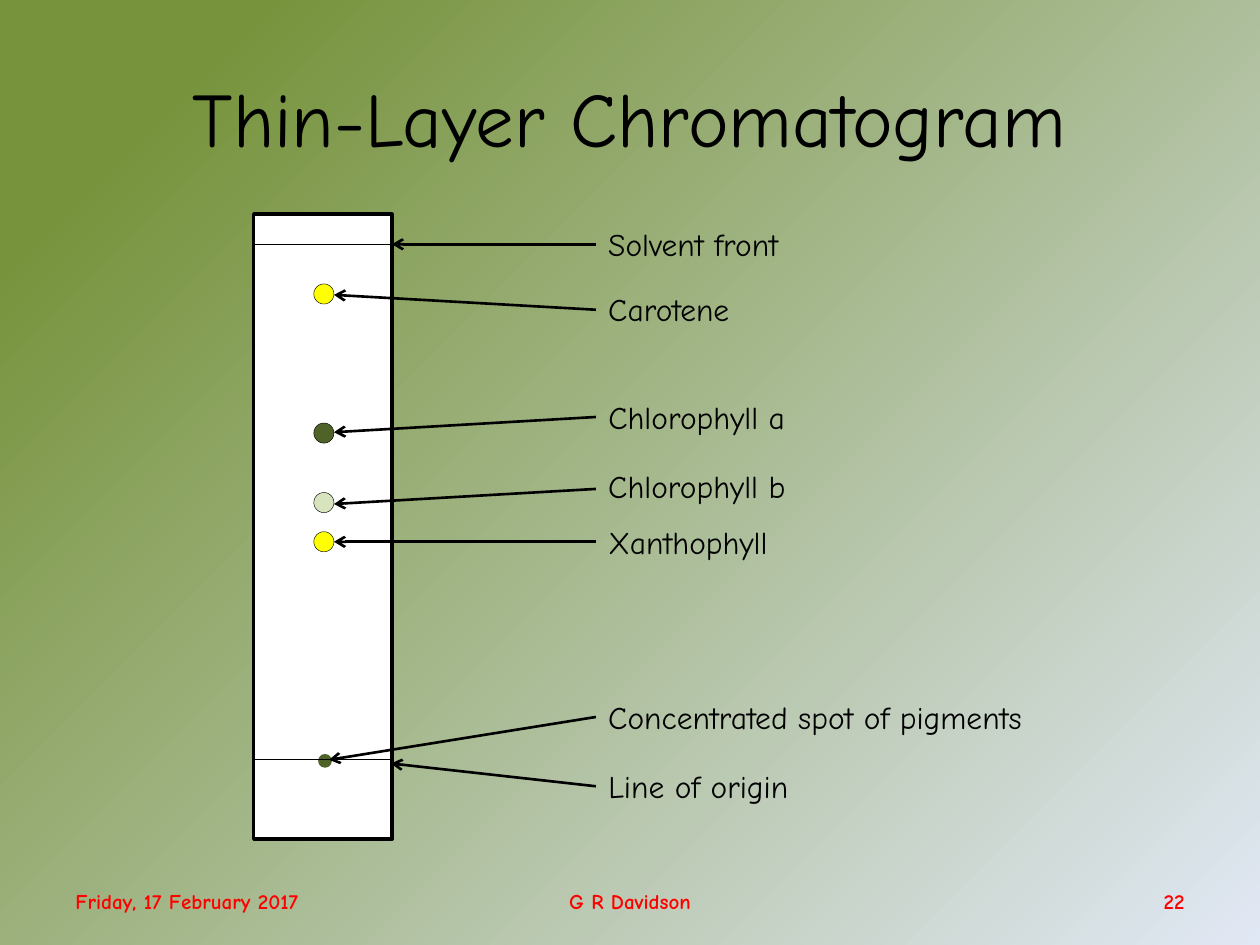
from dataclasses import dataclass

import pptx
import pptx.dml.color
import pptx.enum.dml
import pptx.enum.shapes
import pptx.enum.text
import pptx.oxml
import pptx.oxml.ns
import pptx.util

Pt = pptx.util.Pt
Align = pptx.enum.text.PP_ALIGN
Shape = pptx.enum.shapes.MSO_SHAPE


@dataclass(frozen=True)
class Theme:
    font: str = "Comic Neue"
    ink: str = "000000"
    footer: str = "FF0000"
    paper: str = "FFFFFF"
    yellow: str = "FFFF00"
    dark_green: str = "4F6228"
    pale_green: str = "D7E4BD"
    backdrop: tuple = ((0.12, "77933C"), (1, "E1E8F5"))
    title_size: float = 44
    label_size: float = 18
    footer_size: float = 12


THEME = Theme()

STRIP_LEFT, STRIP_TOP, STRIP_WIDTH, STRIP_HEIGHT = 145, 122.4, 79, 357.2
STRIP_RIGHT = STRIP_LEFT + STRIP_WIDTH
FRONT_Y, ORIGIN_Y = 139.6, 434.2
LABEL_LEFT, LABEL_HEIGHT = 340.5, 29
SPOT_X, SPOT_SIZE = 185.1, 11.5
SPOT_EDGE = SPOT_X + SPOT_SIZE / 2

# centre height and colour of each separated pigment
SPOTS = [
    (309.6, THEME.yellow),
    (287.2, THEME.pale_green),
    (247.5, THEME.dark_green),
    (168, THEME.yellow),
]

# text, label centre, label width, arrow start height, arrow tip
LABELS = [
    ("Solvent front", 139.7, 129.6, 139.6, (STRIP_RIGHT, FRONT_Y)),
    ("Carotene", 176.5, 91.4, 177, (SPOT_EDGE, 168.5)),
    ("Chlorophyll a", 238.3, 123, 238.3, (SPOT_EDGE, 247)),
    ("Chlorophyll b", 278, 124.6, 279.4, (SPOT_EDGE, 288)),
    ("Xanthophyll", 309.6, 114.5, 309.6, (SPOT_EDGE, 309.6)),
    ("Concentrated spot of pigments", 409.7, 276.5, 409.7, (188, ORIGIN_Y)),
    ("Line of origin", 449.3, 126, 449.3, (STRIP_RIGHT - 0.5, 436.3)),
]

FOOTERS = [
    ("Friday, 17 February 2017", 36, 239, Align.LEFT),
    ("G R Davidson", 246, 228, Align.CENTER),
    ("22", 516, 168, Align.RIGHT),
]


def rgb(value):
    return pptx.dml.color.RGBColor.from_string(value)


def paint_background(slide):
    fill = slide.background.fill
    fill.gradient()
    fill.gradient_angle = 315  # counter-clockwise: runs to the lower right
    for stop, (position, color) in zip(fill.gradient_stops, THEME.backdrop):
        stop.position = position
        stop.color.rgb = rgb(color)


def add_text(slide, text, box, size, color=THEME.ink, align=Align.LEFT,
             bold=False, wrap=True, anchor=pptx.enum.text.MSO_ANCHOR.MIDDLE):
    frame = slide.shapes.add_textbox(*map(Pt, box)).text_frame
    frame.word_wrap = wrap
    frame.vertical_anchor = anchor
    frame.text = text
    paragraph = frame.paragraphs[0]
    paragraph.alignment = align
    font = paragraph.runs[0].font
    font.name, font.size, font.bold = THEME.font, Pt(size), bold
    font.color.rgb = rgb(color)
    return frame


def add_outlined(slide, kind, box, fill, line, width):
    shape = slide.shapes.add_shape(kind, *map(Pt, box))
    shape.shadow.inherit = False
    shape.fill.solid()
    shape.fill.fore_color.rgb = rgb(fill)
    shape.line.color.rgb = rgb(line)
    shape.line.width = Pt(width)


def add_spot(slide, x, y, size, fill, line, width):
    """Draw a pigment spot centred on x, y."""
    box = (x - size / 2, y - size / 2, size, size)
    add_outlined(slide, Shape.OVAL, box, fill, line, width)


def add_line(slide, start, end, width, arrow=False):
    line = slide.shapes.add_connector(
        pptx.enum.shapes.MSO_CONNECTOR.STRAIGHT, *map(Pt, (*start, *end)))
    line.line.color.rgb = rgb(THEME.ink)
    line.line.width = Pt(width)
    qn, make = pptx.oxml.ns.qn, pptx.oxml.parse_xml
    properties = line.element.find(qn("p:spPr"))
    namespace = pptx.oxml.ns.nsdecls("a")
    if arrow:
        properties.find(qn("a:ln")).append(
            make(f'<a:tailEnd {namespace} type="arrow"/>'))
    properties.append(make(f"<a:effectLst {namespace}/>"))


def add_label(slide, text, centre, width, start_y, tip):
    box = (LABEL_LEFT, centre - LABEL_HEIGHT / 2, width, LABEL_HEIGHT)
    frame = add_text(slide, text, box, THEME.label_size, wrap=False,
                     anchor=pptx.enum.text.MSO_ANCHOR.TOP)
    frame.auto_size = pptx.enum.text.MSO_AUTO_SIZE.SHAPE_TO_FIT_TEXT
    add_line(slide, (LABEL_LEFT, start_y), tip, 1.5, arrow=True)


def add_plate(slide):
    """Draw the strip with its pigment spots and its two marked levels."""
    strip = (STRIP_LEFT, STRIP_TOP, STRIP_WIDTH, STRIP_HEIGHT)
    add_outlined(slide, Shape.RECTANGLE, strip, THEME.paper, THEME.ink, 2)
    for y, color in SPOTS:
        add_spot(slide, SPOT_X, y, SPOT_SIZE, color, THEME.ink, 0.25)
    add_spot(slide, 185.7, 434.8, 5.8, THEME.dark_green, THEME.dark_green, 2)
    for y in (FRONT_Y, ORIGIN_Y):
        add_line(slide, (STRIP_LEFT, y), (STRIP_RIGHT, y), 0.75)


def main():
    deck = pptx.Presentation()
    deck.slide_width, deck.slide_height = Pt(720), Pt(540)
    slide = deck.slides.add_slide(deck.slide_layouts[6])
    paint_background(slide)
    add_text(slide, "Thin-Layer Chromatogram", (36, 21.6, 648, 90),
             THEME.title_size, align=Align.CENTER)
    for text, left, width, align in FOOTERS:
        add_text(slide, text, (left, 500.5, width, 28.8), THEME.footer_size,
                 THEME.footer, align, bold=True)
    add_plate(slide)
    for label in LABELS:
        add_label(slide, *label)
    deck.save("out.pptx")


if __name__ == "__main__":
    main()
